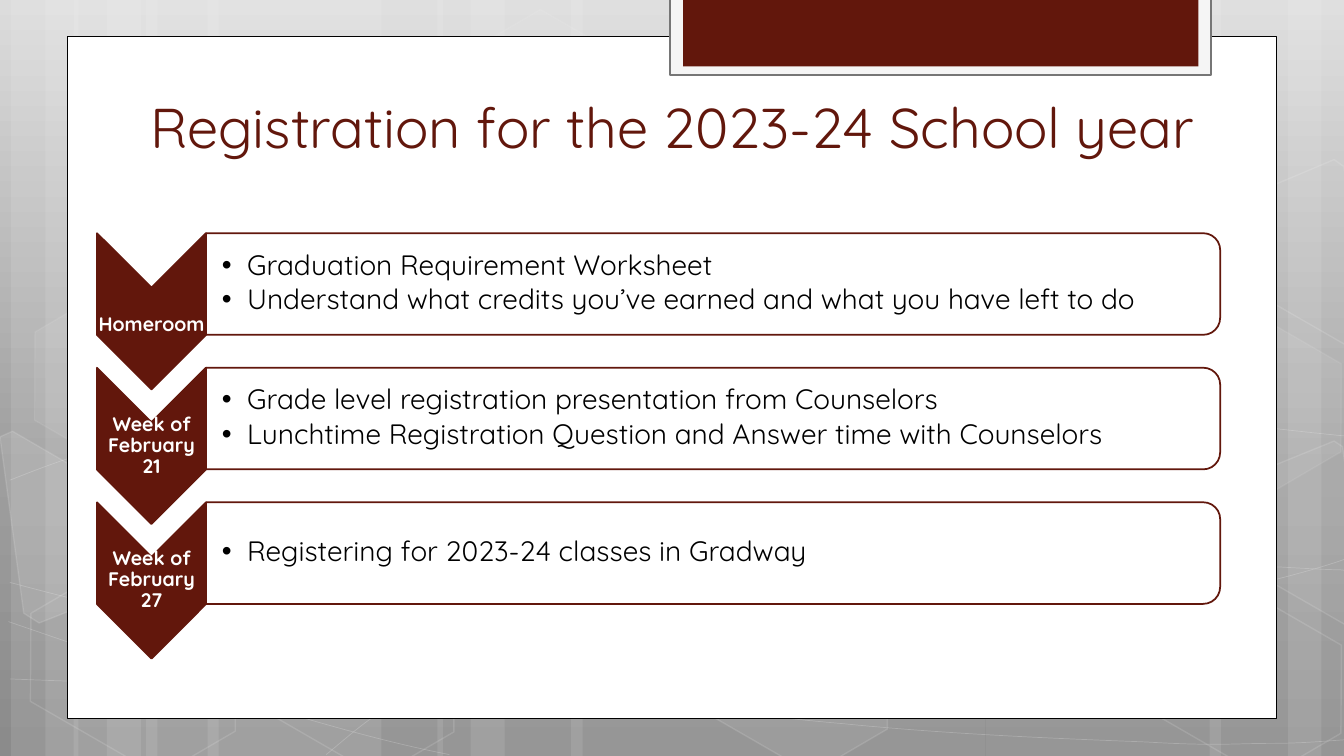
from dataclasses import dataclass

from lxml.etree import SubElement
from pptx import Presentation
from pptx.dml.color import RGBColor
from pptx.enum.shapes import MSO_SHAPE
from pptx.enum.text import MSO_ANCHOR, PP_ALIGN
from pptx.oxml.ns import qn
from pptx.util import Pt


@dataclass(frozen=True)
class Theme:
    font: str = "Quicksand"
    maroon: str = "62170C"
    white: str = "FFFFFF"
    black: str = "000000"
    tab: str = "F5F5F5"
    tab_edge: str = "767676"
    backdrop: tuple = ((0, "DCDCDC"), (62, "9E9E9E"), (100, "8B8B8B"))
    title: int = 40
    body: int = 20
    label: int = 14


THEME = Theme()
WIDTH, HEIGHT = 960, 540
STEP_PITCH = 96.1

# Backdrop: left edge and width of each light bar
BARS = [(104.4, 168), (8, 48), (32.4, 80), (148.3, 168), (52.6, 48), (76.3, 80),
        (704, 168), (920, 48), (864, 80), (408, 296), (312.5, 48), (336.2, 80)]
# Backdrop: start point, then two control points and an end point per segment
CURVES = [
    [(7, 485), (59, 487), (111, 489), (183, 488), (255, 487), (343, 486), (439, 479),
     (536, 472), (672, 458), (760, 444), (848, 431), (938, 409), (967, 397)],
    [(7, 343), (35, 332), (62, 321), (117, 310), (171, 300), (248, 284), (333, 279),
     (419, 274), (522, 273), (628, 279), (734, 284), (909, 307), (967, 312)],
    [(6, 444), (122, 484), (238, 523), (321, 539)],
    [(7, 416), (37, 424), (67, 432), (123, 444), (179, 454), (262, 472), (342, 485),
     (422, 497), (523, 510), (603, 517), (683, 525), (768, 528), (819, 530),
     (869, 533), (882, 531), (907, 531), (932, 531), (950, 529), (967, 528)],
    [(233, 539), (250, 525), (266, 510), (290, 498), (313, 485), (346, 470), (372, 460),
     (399, 450), (415, 446), (451, 438), (486, 431), (551, 421), (584, 416),
     (618, 411), (623, 411), (653, 410), (683, 408), (725, 405), (762, 405),
     (796, 404), (851, 405), (851, 405), (872, 405), (893, 405), (914, 405),
     (932, 406), (948, 407), (957, 407), (966, 408), (963, 407), (966, 408)],
]
# Backdrop: left, top, fill opacity and line opacity of each hexagon
HEXAGONS = [(320.4, 26, 4, 8), (476.6, 424, 6, 12), (10.8, 425.5, 0, 12), (13.7, 224.6, 7, 8),
            (167, 426, 0, 12), (800.6, 427, 0, 12), (800.6, 226, 7, 8)]
# Backdrop: fill opacity and corners of the hexagons cut by the slide edge
CUT_HEXAGONS = [
    (10, [(0, 312), (9, 308), (83, 351), (91, 420), (28, 445), (17, 438)]),
    (4, [(889, 341), (953, 315), (959, 319), (977, 450), (971, 452), (898, 410)]),
    (0, [(889, 141), (953, 114), (960, 119), (977, 249), (971, 252), (898, 210)]),
]
# Timeline: label, downward shift of the label, bullets
STEPS = [
    ("Homeroom", 10.2, ["Graduation Requirement Worksheet",
                        "Understand what credits you’ve earned and what you have left to do"]),
    ("Week of February 21", 0, ["Grade level registration presentation from Counselors",
                                "Lunchtime Registration Question and Answer time with Counselors"]),
    ("Week of February 27", 0, ["Registering for 2023-24 classes in Gradway"]),
]


def paint(target, color, opacity=100):
    """Solid colour for a fill format, with optional transparency."""
    target.solid()
    target.fore_color.rgb = RGBColor.from_string(color)
    if opacity < 100:
        clr = target.fore_color._xFill.find(qn("a:srgbClr"))
        SubElement(clr, qn("a:alpha")).set("val", str(opacity * 1000))


def style(sp, fill=None, opacity=100, line=None, width=1, line_opacity=100):
    sp.shadow.inherit = False
    if fill and opacity:
        paint(sp.fill, fill, opacity)
    else:
        sp.fill.background()
    if line:
        sp.line.width = Pt(width)
        paint(sp.line.fill, line, line_opacity)
    else:
        sp.line.fill.background()


def add_preset(s, kind, x, y, w, h, rotation=0, **look):
    sp = s.shapes.add_shape(kind, Pt(x), Pt(y), Pt(w), Pt(h))
    sp.rotation = rotation
    style(sp, **look)
    return sp


def add_outline(s, points, close, **look):
    fb = s.shapes.build_freeform(*points[0], scale=Pt(1))
    fb.add_line_segments(points[1:], close=close)
    sp = fb.convert_to_shape()
    style(sp, **look)
    return sp


def add_curve(s, knots, **look):
    """Open outline whose points are joined in threes into Bezier segments."""
    sp = add_outline(s, knots, False, **look)
    outline = next(sp._element.iter(qn("a:path")))
    legs = outline.findall(qn("a:lnTo"))
    for i in range(0, len(legs), 3):
        segment = SubElement(outline, qn("a:cubicBezTo"))
        for leg in legs[i:i + 3]:
            segment.append(leg[0])
            outline.remove(leg)


def add_text(s, lines, x, y, w, h, size, color, bold=False, anchor=MSO_ANCHOR.MIDDLE,
             align=PP_ALIGN.CENTER, insets=(1, 1), after=0, spacing=0.9, bullet=False):
    tf = s.shapes.add_textbox(Pt(x), Pt(y), Pt(w), Pt(h)).text_frame
    tf.word_wrap = True
    tf.vertical_anchor = anchor
    tf.margin_left, tf.margin_top = (Pt(v) for v in insets)
    tf.margin_right = tf.margin_bottom = Pt(1)
    for i, line in enumerate(lines):
        p = tf.add_paragraph() if i else tf.paragraphs[0]
        p.alignment, p.line_spacing, p.space_after = align, spacing, Pt(after)
        if bullet:
            pPr = p._p.get_or_add_pPr()
            pPr.set("marL", str(Pt(18)))
            pPr.set("indent", str(Pt(-18)))
            SubElement(pPr, qn("a:buFont")).set("typeface", "Arial")
            SubElement(pPr, qn("a:buChar")).set("char", "•")
        r = p.add_run()
        r.text = line
        r.font.name, r.font.size, r.font.bold = THEME.font, Pt(size), bold
        r.font.color.rgb = RGBColor.from_string(color)


def add_backdrop(s):
    fill = s.background.fill
    fill.gradient()
    fill.gradient_angle = 270
    stops = next(s._element.iter(qn("a:gsLst")))
    for gs in list(stops):
        stops.remove(gs)
    for position, color in THEME.backdrop:
        gs = SubElement(stops, qn("a:gs"))
        gs.set("pos", str(position * 1000))
        SubElement(gs, qn("a:srgbClr")).set("val", color)

    for x, w in BARS:
        add_preset(s, MSO_SHAPE.RECTANGLE, x, 0, w, HEIGHT, fill=THEME.white, opacity=10)
    for knots in CURVES:
        add_curve(s, knots, line=THEME.white, width=0.5, line_opacity=20)
    for x, y, opacity, line_opacity in HEXAGONS:
        sp = add_preset(s, MSO_SHAPE.HEXAGON, x, y, 168.5, 109.4, 30, fill=THEME.white,
                        opacity=opacity, line=THEME.white, line_opacity=line_opacity)
        sp.adjustments[0] = 0.285
    for opacity, corners in CUT_HEXAGONS:
        add_outline(s, corners, True, fill=THEME.white, opacity=opacity,
                    line=THEME.white, line_opacity=12)


def add_panel(s):
    rect = MSO_SHAPE.RECTANGLE
    add_preset(s, rect, 48, 26, 864, 487, fill=THEME.white, line=THEME.black, width=0.5)
    add_preset(s, rect, 478.6, -1.4, 386.3, 54.8, fill=THEME.tab, line=THEME.tab_edge, width=1.25)
    add_preset(s, rect, 488, -1.4, 368, 48.8, fill=THEME.maroon)


def add_step(s, top, label, shift, bullets):
    look = dict(line=THEME.maroon, width=1.25)
    add_preset(s, MSO_SHAPE.CHEVRON, 52.4, top + 17, 111.6, 77.8, 90, fill=THEME.maroon, **look)
    add_text(s, [label], 69.3, top + 39.4 + shift, 78, 33, THEME.label, THEME.white, bold=True)
    add_preset(s, MSO_SHAPE.ROUND_2_SAME_RECTANGLE, 473.1, top - 325.8, 72.6, 724.3, 90,
               fill=THEME.white, opacity=90, **look)
    add_text(s, bullets, 147.3, top + 3.3, 720.7, 65.5, THEME.body, THEME.black,
             align=PP_ALIGN.LEFT, insets=(11.2, 1), after=3, bullet=True)


def main():
    prs = Presentation()
    prs.slide_width, prs.slide_height = Pt(WIDTH), Pt(HEIGHT)
    s = prs.slides.add_slide(prs.slide_layouts[6])

    add_backdrop(s)
    add_panel(s)

    # Title
    add_text(s, ["Registration for the 2023-24 School year"], 46, 55.4, 868, 60,
             THEME.title, THEME.maroon, anchor=MSO_ANCHOR.BOTTOM, spacing=1)

    # Timeline
    for i, step in enumerate(STEPS):
        add_step(s, 166.5 + i * STEP_PITCH, *step)

    prs.save("out.pptx")


if __name__ == "__main__":
    main()
